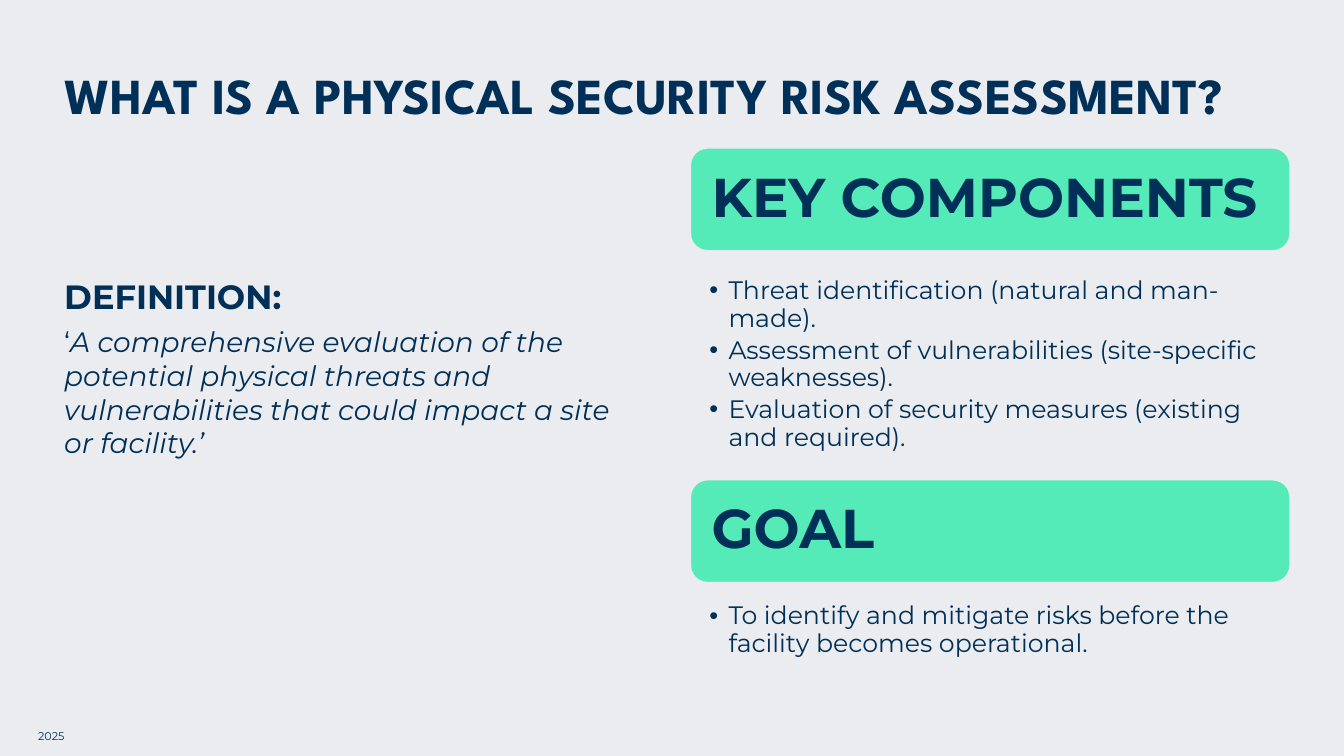
from dataclasses import dataclass

from lxml.etree import SubElement
from pptx import Presentation
from pptx.dml.color import RGBColor
from pptx.enum.shapes import MSO_SHAPE as Shape
from pptx.enum.text import MSO_ANCHOR as Anchor, PP_ALIGN as Align
from pptx.oxml.ns import qn
from pptx.util import Cm, Pt


@dataclass(frozen=True)
class Theme:
    paper: RGBColor = RGBColor.from_string("EBECF0")
    navy: RGBColor = RGBColor.from_string("003057")
    mint: RGBColor = RGBColor.from_string("55EBB9")
    title_font: str = "League Spartan"
    body_font: str = "Montserrat"
    title: int = 36
    banner: int = 39
    heading: int = 24
    quote: int = 20
    bullet: int = 18
    footer: int = 8


THEME = Theme()


def set_insets(tf, left, top, right, bottom):
    tf.margin_left, tf.margin_top = Cm(left), Cm(top)
    tf.margin_right, tf.margin_bottom = Cm(right), Cm(bottom)


def add_text_frame(slide, box, insets=(0.25, 0.13, 0.25, 0.13)):
    tf = slide.shapes.add_textbox(*map(Cm, box)).text_frame
    tf.word_wrap = True
    set_insets(tf, *insets)
    return tf


def style_run(r, size, bold=False, italic=False, font=THEME.body_font):
    r.font.name, r.font.size = font, Pt(size)
    r.font.bold, r.font.italic = bold, italic
    r.font.color.rgb = THEME.navy


def add_bullet(p, indent):
    pPr = p._p.get_or_add_pPr()
    pPr.set("marL", str(Cm(indent)))
    pPr.set("indent", str(-Cm(indent)))
    SubElement(pPr, qn("a:buFont"), typeface="Arial")
    SubElement(pPr, qn("a:buChar"), char="•")


def add_title(slide, box, text):
    p = add_text_frame(slide, box, (0.25, 0.48, 0.25, 0.13)).paragraphs[0]
    p.text = text
    p.line_spacing = 0.9
    style_run(p.runs[0], THEME.title, bold=True, font=THEME.title_font)


def add_definition(slide, box, heading, quote):
    tf = add_text_frame(slide, box, (0.25, 3.84, 0.25, 0.13))
    p = tf.paragraphs[0]
    p.text = heading
    style_run(p.runs[0], THEME.heading, bold=True)
    p = tf.add_paragraph()
    p.space_before = Pt(6)
    for text, italic in (("‘", False), (quote, True)):
        r = p.add_run()
        r.text = text
        style_run(r, THEME.quote, italic=italic)


def add_banner(slide, box, text):
    sp = slide.shapes.add_shape(Shape.ROUNDED_RECTANGLE, *map(Cm, box))
    sp.shadow.inherit = False
    sp.fill.solid()
    sp.fill.fore_color.rgb = THEME.mint
    sp.line.color.rgb = THEME.paper
    sp.line.width = Pt(1)
    tf = sp.text_frame
    tf.word_wrap = True
    tf.vertical_anchor = Anchor.MIDDLE
    set_insets(tf, 0.41, 0.41, 0.41, 0.41)
    p = tf.paragraphs[0]
    p.text = text
    p.alignment = Align.LEFT
    p.line_spacing = 0.9
    style_run(p.runs[0], THEME.banner, bold=True)


def add_bullets(slide, box, items):
    tf = add_text_frame(slide, box, (0.48, 0.08, 0.36, 0.08))
    for i, item in enumerate(items):
        p = tf.paragraphs[0] if i == 0 else tf.add_paragraph()
        p.text = item
        p.line_spacing = 0.9
        p.space_after = Pt(0.2 * THEME.bullet)
        add_bullet(p, 0.48)
        style_run(p.runs[0], THEME.bullet)


def add_section(slide, box, heading, items, gap):
    """A banner at the top of the box, with bullets a gap below it."""
    left, top, width, height = box
    banner_h = 2.59
    add_banner(slide, (left, top, width, banner_h), heading)
    offset = banner_h + gap
    add_bullets(slide, (left, top + offset, width, height - offset), items)


def add_footer(slide, box, text):
    p = add_text_frame(slide, box).paragraphs[0]
    p.text = text
    style_run(p.runs[0], THEME.footer)


def main():
    prs = Presentation()
    prs.slide_width, prs.slide_height = Cm(33.87), Cm(19.05)
    slide = prs.slides.add_slide(prs.slide_layouts[6])
    slide.background.fill.solid()
    slide.background.fill.fore_color.rgb = THEME.paper

    add_footer(slide, (0.71, 18.26, 6.65, 0.61), "2025")
    add_title(slide, (1.37, 1.3, 31.14, 1.68),
              "WHAT IS A PHYSICAL SECURITY RISK ASSESSMENT?")
    add_definition(
        slide, (1.37, 3.12, 15.11, 13.44), "DEFINITION:",
        "A comprehensive evaluation of the potential physical threats and "
        "vulnerabilities that could impact a site or facility.’")
    add_section(slide, (17.4, 3.73, 15.11, 7.9), "KEY COMPONENTS", [
        "Threat identification (natural and man-made).",
        "Assessment of vulnerabilities (site-specific weaknesses).",
        "Evaluation of security measures (existing and required).",
    ], gap=0.61)
    add_section(slide, (17.4, 12.09, 15.11, 4.55), "GOAL", [
        "To identify and mitigate risks before the facility becomes operational.",
    ], gap=0.44)
    prs.save("out.pptx")


if __name__ == "__main__":
    main()
